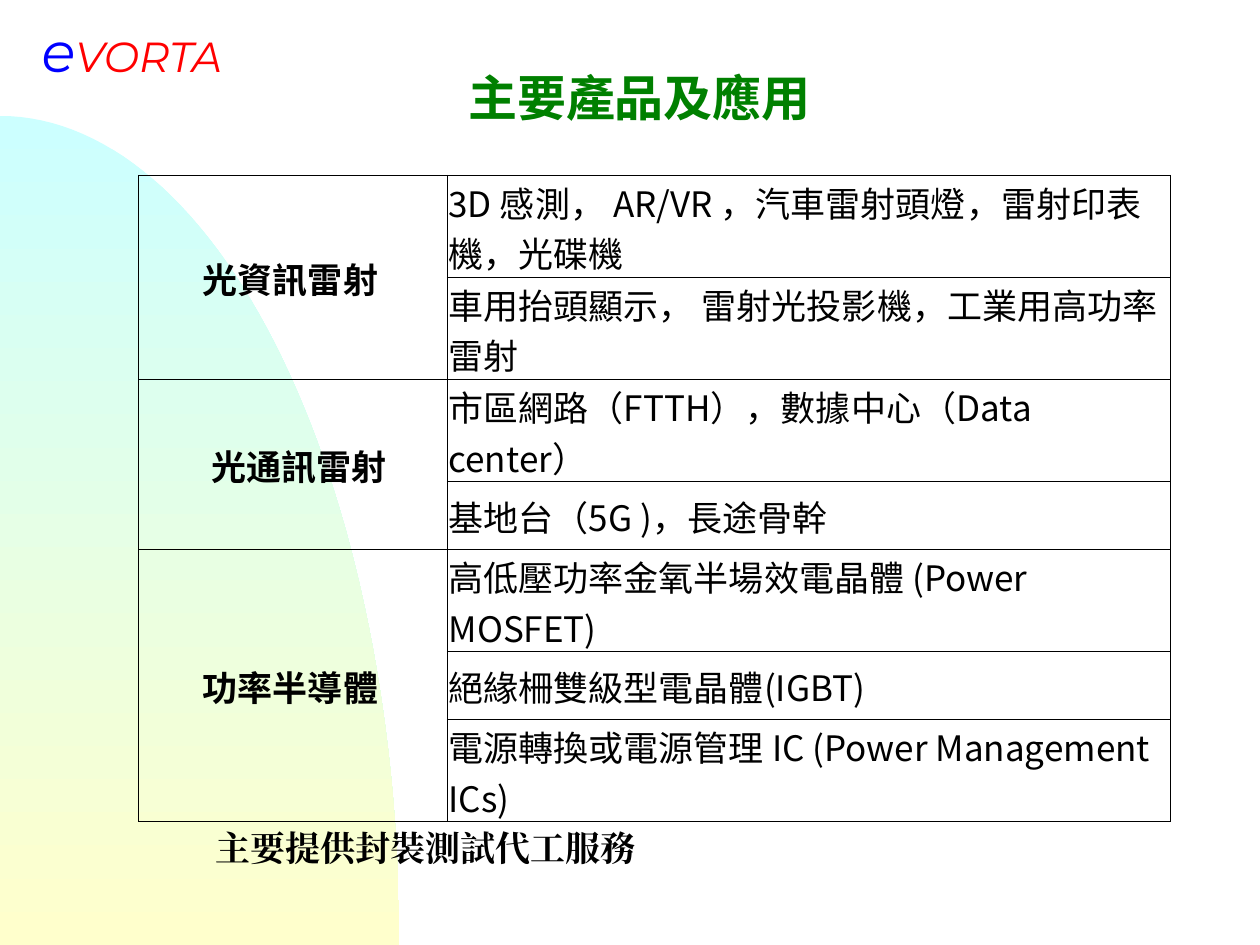
from math import cos, pi, sin

from pptx import Presentation
from pptx.dml.color import RGBColor
from pptx.enum.text import MSO_ANCHOR as Anchor, PP_ALIGN as Align
from pptx.oxml import parse_xml
from pptx.oxml.ns import nsdecls, qn
from pptx.util import Inches, Pt

BLACK = RGBColor(0x00, 0x00, 0x00)
BLUE = RGBColor(0x00, 0x00, 0xFF)
RED = RGBColor(0xFF, 0x00, 0x00)
GREEN = RGBColor(0x00, 0x80, 0x00)
AQUA = RGBColor(0xCC, 0xFF, 0xFF)
CREAM = RGBColor(0xFF, 0xFF, 0xCC)

# Each group: label, label indent in inches, [(application, row height)]
PRODUCTS = [
    ("光資訊雷射", 0.5, [
        ("3D 感測， AR/VR ，汽車雷射頭燈，雷射印表機，光碟機", 0.81),
        ("車用抬頭顯示， 雷射光投影機，工業用高功率雷射", 0.81)]),
    ("光通訊雷射", 0.57, [
        ("市區網路（FTTH），數據中心（Data center）", 0.81),
        ("基地台（5G )，長途骨幹", 0.54)]),
    ("功率半導體", 0.5, [
        ("高低壓功率金氧半場效電晶體 (Power MOSFET)", 0.81),
        ("絕緣柵雙級型電晶體(IGBT)", 0.54),
        ("電源轉換或電源管理 IC (Power Management ICs)", 0.81)]),
]


def add_run(p, text, size, font, color, bold=False, italic=False):
    r = p.add_run()
    r.text = text
    f = r.font
    f.size, f.name, f.bold, f.italic = Pt(size), font, bold, italic
    f.color.rgb = color
    # East Asian text uses the same typeface
    r._r.rPr.find(qn("a:latin")).addnext(
        parse_xml(f'<a:ea {nsdecls("a")} typeface="{font}"/>'))


def add_text(slide, box, runs, align=Align.LEFT):
    tf = slide.shapes.add_textbox(*box).text_frame
    tf.word_wrap = True
    p = tf.paragraphs[0]
    p.alignment = align
    for run in runs:
        add_run(p, *run)


def add_backdrop(slide, left, top, width, height, steps=60):
    """Quarter ellipse centred on the bottom left corner of its box."""
    angles = [pi / 2 * i / steps for i in range(steps + 1)]
    arc = [(left + width * sin(a), top + height * (1 - cos(a))) for a in angles]
    builder = slide.shapes.build_freeform(*arc[0])
    builder.add_line_segments(arc[1:] + [(left, top + height)], close=True)
    sp = builder.convert_to_shape()
    sp.shadow.inherit = False
    sp.line.fill.background()
    sp.fill.gradient()
    sp.fill.gradient_angle = 270
    for stop, color in zip(sp.fill.gradient_stops, (AQUA, CREAM)):
        stop.color.rgb = color


def add_borders(cell):
    tcPr = cell._tc.get_or_add_tcPr()
    for i, side in enumerate(("lnL", "lnR", "lnT", "lnB")):
        tcPr.insert(i, parse_xml(
            f'<a:{side} {nsdecls("a")} w="{Pt(0.5)}"><a:solidFill>'
            f'<a:srgbClr val="{BLACK}"/></a:solidFill></a:{side}>'))


def fill_cell(cell, text, bold=False, indent=0):
    cell.vertical_anchor = Anchor.MIDDLE
    p = cell.text_frame.paragraphs[0]
    pPr = p._p.get_or_add_pPr()
    pPr.set("marL", str(Inches(indent)))
    pPr.set("indent", "0")
    add_run(p, text, 20, "Noto Sans CJK TC", BLACK, bold)


def add_products(slide, left, top, width, height):
    rows = [row for _, _, group in PRODUCTS for row in group]
    table = slide.shapes.add_table(len(rows), 2, left, top, width, height).table
    table.first_row = table.horz_banding = False
    label_width = Inches(2.45)
    table.columns[0].width = label_width
    table.columns[1].width = width - label_width

    for cell in table.iter_cells():
        cell.margin_left = cell.margin_right = cell.margin_top = Inches(0.01)
        cell.margin_bottom = 0
        cell.fill.background()
        add_borders(cell)

    for i, (text, row_height) in enumerate(rows):
        table.rows[i].height = Inches(row_height)
        fill_cell(table.cell(i, 1), text)

    first = 0
    for label, indent, group in PRODUCTS:
        last = first + len(group) - 1
        table.cell(first, 0).merge(table.cell(last, 0))
        fill_cell(table.cell(first, 0), label, True, indent)
        first = last + 1


def box(*lengths):
    return [Inches(n) for n in lengths]


def main():
    prs = Presentation()
    prs.slide_width, prs.slide_height = Inches(10), Inches(7.5)
    slide = prs.slides.add_slide(prs.slide_layouts[6])

    add_backdrop(slide, *box(0, 0.92, 3.17, 6.58))
    # Company name
    add_text(slide, box(0.17, 0.08, 1.75, 0.63),
             [("e", 32, "Montserrat", BLUE, False, True),
              ("VORTA", 24, "Montserrat", RED, False, True)], Align.CENTER)
    # Title
    add_text(slide, box(3.5, 0.49, 3.15, 0.57),
             [("主要產品及應用", 28, "Noto Sans CJK SC", GREEN, True)], Align.CENTER)
    add_products(slide, *box(1.1, 1.39, 8.19, 5.12))
    # Closing line
    add_text(slide, box(1.61, 6.51, 7.17, 0.44),
             [("主要提供封裝測試代工服務", 20, "Times New Roman", BLACK, True)])

    prs.save("out.pptx")


if __name__ == "__main__":
    main()
